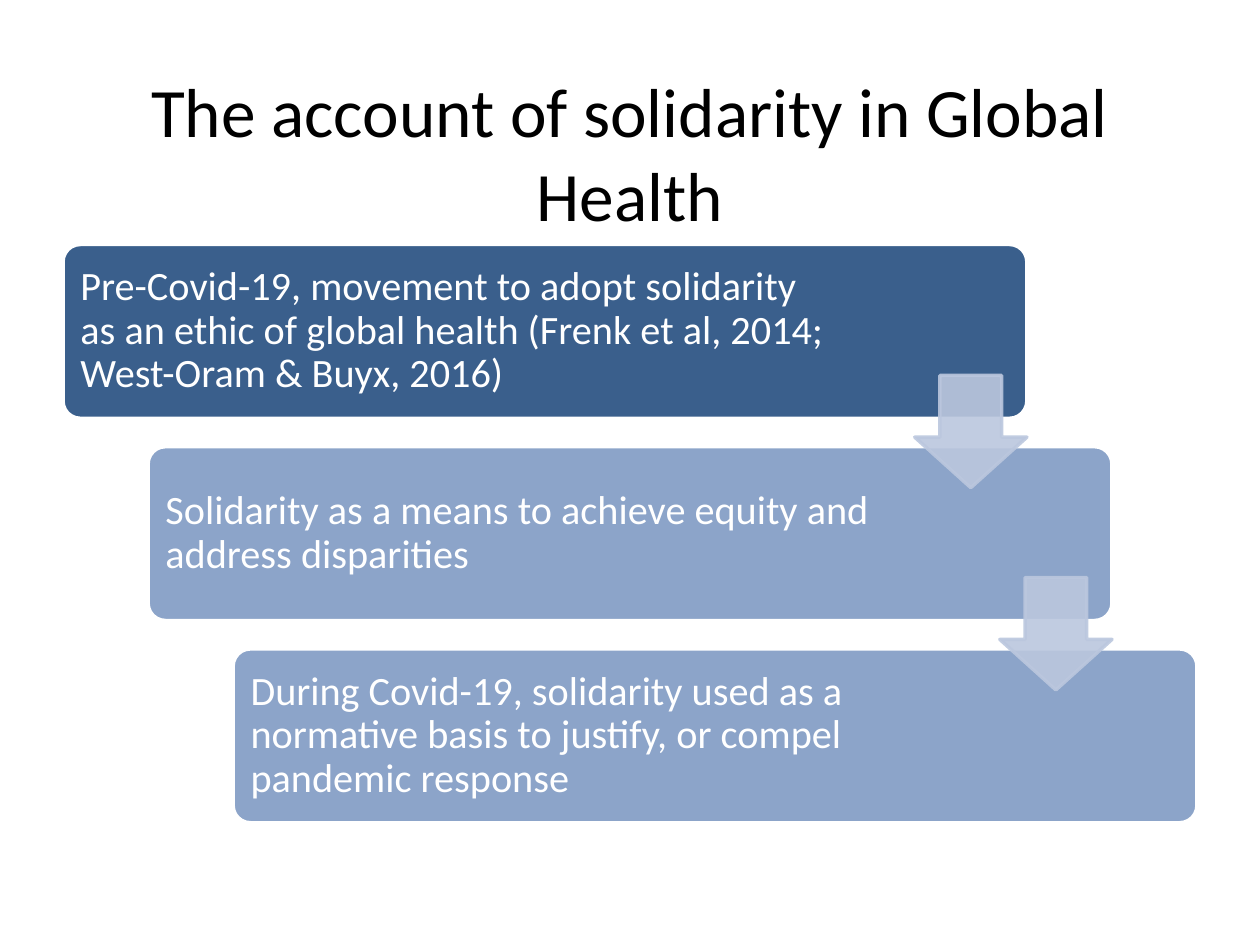
from lxml.etree import SubElement
from pptx import Presentation
from pptx.dml.color import RGBColor
from pptx.enum.shapes import MSO_SHAPE as Shape
from pptx.enum.text import MSO_ANCHOR as Anchor, PP_ALIGN as Align
from pptx.oxml.ns import qn
from pptx.util import Inches, Pt

TITLE = "The account of solidarity in Global Health"

BLACK = RGBColor(0x00, 0x00, 0x00)
WHITE = RGBColor(0xFF, 0xFF, 0xFF)
DARK_BLUE = RGBColor(0x3A, 0x5F, 0x8C)
MID_BLUE = RGBColor(0x8C, 0xA4, 0xC9)
PALE_BLUE = RGBColor(0xBB, 0xC7, 0xDE)
FONT = "Calibri"

# Steps: text, fill, text width
STEPS = [
    ("Pre-Covid-19, movement to adopt solidarity as an ethic of global health "
     "(Frenk et al, 2014; West-Oram & Buyx, 2016)", DARK_BLUE, 6.16),
    ("Solidarity as a means to achieve equity and address disparities",
     MID_BLUE, 6),
    ("During Covid-19, solidarity used as a normative basis to justify, "
     "or compel pandemic response", MID_BLUE, 6),
]

# Staircase geometry in inches
LEFT, TOP = 0.5, 1.94
STEP_X, STEP_Y = 0.675, 1.605
CARD_WIDTH, CARD_HEIGHT = 7.65, 1.38
TEXT_INSET = 0.04
ARROW_SIZE, ARROW_DROP = 0.89, 1.04


def add_block(slide, kind, place, adjustments, fill, line):
    block = slide.shapes.add_shape(kind, *map(Inches, place))
    block.shadow.inherit = False
    for index, value in enumerate(adjustments):
        block.adjustments[index] = value
    block.fill.solid()
    block.fill.fore_color.rgb = fill
    block.line.color.rgb = line
    block.line.width = Pt(2)
    return block


def set_opacity(shape, percent):
    for color in shape._element.spPr.iter(qn("a:srgbClr")):
        SubElement(color, qn("a:alpha")).set("val", str(percent * 1000))


def add_step_text(slide, place, text):
    box = slide.shapes.add_textbox(*map(Inches, place))
    frame = box.text_frame
    frame.word_wrap = True
    frame.vertical_anchor = Anchor.MIDDLE
    frame.margin_left = frame.margin_right = Inches(0.1)
    frame.margin_top = frame.margin_bottom = Inches(0.1)
    para = frame.paragraphs[0]
    para.text = text
    para.line_spacing = 0.9
    style(para, 23, WHITE)


def style(para, size, color):
    para.font.name = FONT
    para.font.size = Pt(size)
    para.font.color.rgb = color


def main():
    deck = Presentation()
    deck.slide_width, deck.slide_height = Inches(10), Inches(7.5)
    slide = deck.slides.add_slide(deck.slide_layouts[5])

    # Title
    title = slide.shapes.title
    title.left, title.top = Inches(0.5), Inches(0.58)
    title.width, title.height = Inches(9), Inches(1.25)
    title.text_frame.vertical_anchor = Anchor.MIDDLE
    para = title.text_frame.paragraphs[0]
    para.text = TITLE
    para.alignment = Align.CENTER
    style(para, 39.6, BLACK)

    # Cards, each one step down and to the right
    for index, (text, fill, text_width) in enumerate(STEPS):
        left, top = LEFT + index * STEP_X, TOP + index * STEP_Y
        add_block(slide, Shape.ROUNDED_RECTANGLE,
                  (left, top, CARD_WIDTH, CARD_HEIGHT), [0.1], fill, WHITE)
        add_step_text(slide, (left + TEXT_INSET, top + TEXT_INSET, text_width,
                              CARD_HEIGHT - 2 * TEXT_INSET), text)

    # Arrows at the right edge of every card but the last
    for index in range(len(STEPS) - 1):
        left = LEFT + index * STEP_X + CARD_WIDTH - ARROW_SIZE
        top = TOP + index * STEP_Y + ARROW_DROP
        arrow = add_block(slide, Shape.DOWN_ARROW,
                          (left, top, ARROW_SIZE, ARROW_SIZE),
                          [0.55, 0.45], PALE_BLUE, PALE_BLUE)
        set_opacity(arrow, 90)

    deck.save("out.pptx")


if __name__ == "__main__":
    main()
